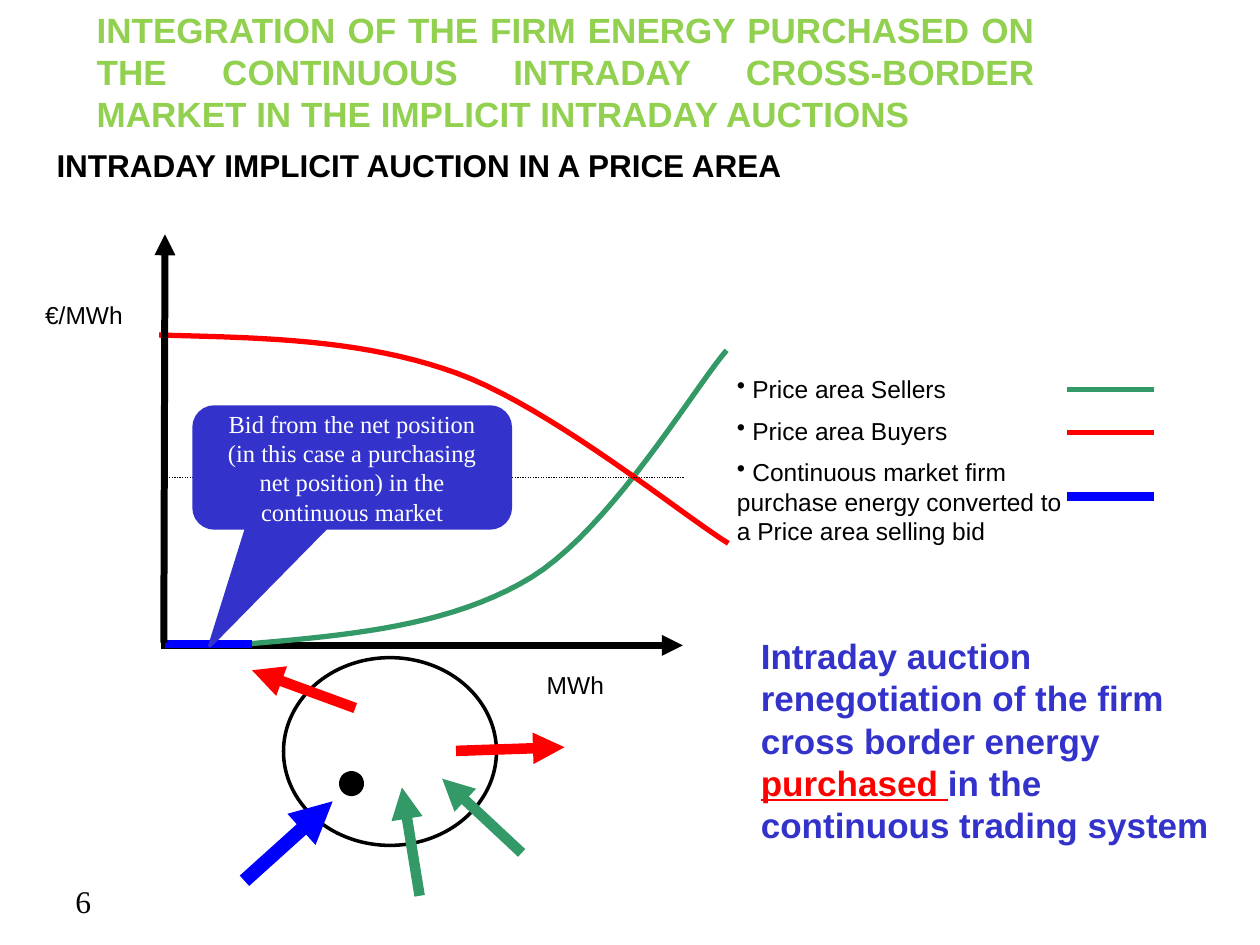
"""Build the slide on the intraday implicit auction in a price area."""
from lxml import etree
from pptx import Presentation
from pptx.dml.color import RGBColor
from pptx.enum.dml import MSO_LINE
from pptx.enum.shapes import MSO_CONNECTOR, MSO_SHAPE
from pptx.enum.text import MSO_ANCHOR, PP_ALIGN
from pptx.oxml.ns import qn
from pptx.util import Pt

BLACK = RGBColor(0x00, 0x00, 0x00)
WHITE = RGBColor(0xFF, 0xFF, 0xFF)
GREEN = RGBColor(0x33, 0x99, 0x66)
RED = RGBColor(0xFF, 0x00, 0x00)
BLUE = RGBColor(0x00, 0x00, 0xFF)
INDIGO = RGBColor(0x33, 0x33, 0xCC)
LIME = RGBColor(0x92, 0xD0, 0x50)
CURVE_STEPS = 20

prs = Presentation()
prs.slide_width, prs.slide_height = Pt(720), Pt(540)
slide = prs.slides.add_slide(prs.slide_layouts[6])
shapes = slide.shapes


def add_line(x1, y1, x2, y2, color, width, arrow=False):
    line = shapes.add_connector(MSO_CONNECTOR.STRAIGHT, Pt(x1), Pt(y1), Pt(x2), Pt(y2))
    line.line.color.rgb = color
    line.line.width = Pt(width)
    properties = line._element.spPr
    if arrow:
        etree.SubElement(properties.find(qn("a:ln")), qn("a:tailEnd"), type="triangle")
    etree.SubElement(properties, qn("a:effectLst"))
    return line


def add_text(left, top, width, height, parts, size, color, bold=False, font="Arial"):
    frame = shapes.add_textbox(Pt(left), Pt(top), Pt(width), Pt(height)).text_frame
    frame.word_wrap = True
    for part in parts:
        run = frame.paragraphs[0].add_run()
        run.text = part
        run.font.name, run.font.size, run.font.bold = font, Pt(size), bold
        run.font.color.rgb = color
    return frame


add_text(36, 500.4, 168, 29, ["6"], 18, BLACK, font="Times New Roman")

for left, top, width, height, weight in [
    (162, 375.8, 121.7, 107.3, 2),
    (197.3, 444.2, 7.2, 7.2, 7.25),
]:
    area = shapes.add_shape(MSO_SHAPE.OVAL, Pt(left), Pt(top), Pt(width), Pt(height))
    area.shadow.inherit = False
    area.fill.background()
    area.line.color.rgb = BLACK
    area.line.width = Pt(weight)

add_line(92.2, 368.8, 390.2, 368.8, BLACK, 4, arrow=True)

sellers_curve = [(141.1, 368), (199.5, 363), (257.8, 357.9), (303.8, 329.8),
                 (349.2, 301.7), (396.7, 221.8), (415.2, 200.2)]
buyers_curve = [(90.9, 191.5), (149, 193), (207.4, 193.7), (261.4, 213.4),
                (315.4, 233.3), (390.2, 294.5), (416.2, 310.5)]
for controls, color in [(sellers_curve, GREEN), (buyers_curve, RED)]:
    points = []
    for start in (0, 3):
        p0, p1, p2, p3 = controls[start:start + 4]
        for step in range(1, CURVE_STEPS + 1):
            t = step / CURVE_STEPS
            u = 1 - t
            points.append(tuple(
                Pt(u**3 * a + 3 * u**2 * t * b + 3 * u * t**2 * c + t**3 * d)
                for a, b, c, d in zip(p0, p1, p2, p3)))
    first_x, first_y = controls[0]
    builder = shapes.build_freeform(Pt(first_x), Pt(first_y))
    builder.add_line_segments(points, close=False)
    curve = builder.convert_to_shape()
    curve.shadow.inherit = False
    curve.fill.background()
    curve.line.color.rgb = color
    curve.line.width = Pt(3)

add_text(18.7, 167.8, 64.8, 23.8, ["€/MWh"], 14, BLACK)
add_text(305.3, 379.4, 63.4, 24.5, ["MWh"], 14, BLACK)

legend = add_text(414, 210.2, 210.2, 108.7, [], 14, BLACK)
entries = [
    (" Price area Sellers", 222.5, GREEN, 3),
    (" Price area Buyers", 247, RED, 3),
    (" Continuous market firm purchase energy converted to a Price area selling bid",
     283.7, BLUE, 5),
]
for index, (label, y, color, weight) in enumerate(entries):
    entry = legend.paragraphs[0] if index == 0 else legend.add_paragraph()
    entry.text = label
    if index:
        entry.space_before = Pt(7)
    etree.SubElement(entry._p.get_or_add_pPr(), qn("a:buChar"), char="•")
    entry.font.name, entry.font.size = "Arial", Pt(14)
    entry.font.color.rgb = BLACK
    add_line(609.8, y, 659.5, y, color, weight)

add_line(94.3, 368, 144, 368, BLUE, 5)
clearing_price = add_line(92.2, 272.9, 391, 272.9, BLACK, 0.75)
clearing_price.line.dash_style = MSO_LINE.ROUND_DOT

message = add_text(
    427.7, 359.3, 275, 128.2,
    ["Intraday auction renegotiation of the firm cross border energy ",
     "purchased ", "in the continuous trading system"],
    20, INDIGO, bold=True)
purchased = message.paragraphs[0].runs[1]
purchased.font.color.rgb = RED
purchased.font.underline = True

for x1, y1, x2, y2, color, weight in [
    (239.8, 511.9, 229.7, 450, GREEN, 6),
    (260.6, 429.1, 322.6, 427, RED, 6),
    (298.1, 487.4, 252.7, 445, GREEN, 6),
    (203, 404.6, 144, 383, RED, 6),
    (139.7, 503.3, 190.1, 457.9, BLUE, 8),
]:
    add_line(x1, y1, x2, y2, color, weight, arrow=True)

add_text(25.2, 79.9, 678.2, 28.8, ["INTRADAY IMPLICIT AUCTION IN A PRICE AREA"],
         18, BLACK, bold=True)
title = add_text(
    48.2, 15.1, 550.1, 51.1,
    ["INTEGRATION OF THE FIRM ENERGY PURCHASED ON THE CONTINUOUS INTRADAY "
     "CROSS-BORDER MARKET IN THE IMPLICIT INTRADAY AUCTIONS"],
    20, LIME, bold=True)
title.vertical_anchor = MSO_ANCHOR.MIDDLE
title.paragraphs[0].alignment = PP_ALIGN.JUSTIFY

add_line(93.6, 367.2, 94.3, 133.9, BLACK, 4, arrow=True)

callout = shapes.add_shape(MSO_SHAPE.ROUNDED_RECTANGULAR_CALLOUT,
                           Pt(110.9), Pt(232.6), Pt(180.7), Pt(69.1))
for index, value in enumerate((-0.45, 1.475, 0.167)):
    callout.adjustments[index] = value
callout.shadow.inherit = False
callout.fill.solid()
callout.fill.fore_color.rgb = INDIGO
callout.line.color.rgb = INDIGO
callout.line.width = Pt(2)
callout.text_frame.word_wrap = True
callout.text_frame.vertical_anchor = MSO_ANCHOR.MIDDLE
callout.text_frame.text = ("Bid from the net position (in this case a purchasing "
                           "net position) in the continuous market")
bid = callout.text_frame.paragraphs[0]
bid.alignment = PP_ALIGN.CENTER
bid.runs[0].font.name, bid.runs[0].font.size = "Times New Roman", Pt(14)
bid.runs[0].font.color.rgb = WHITE

prs.save("out.pptx")
